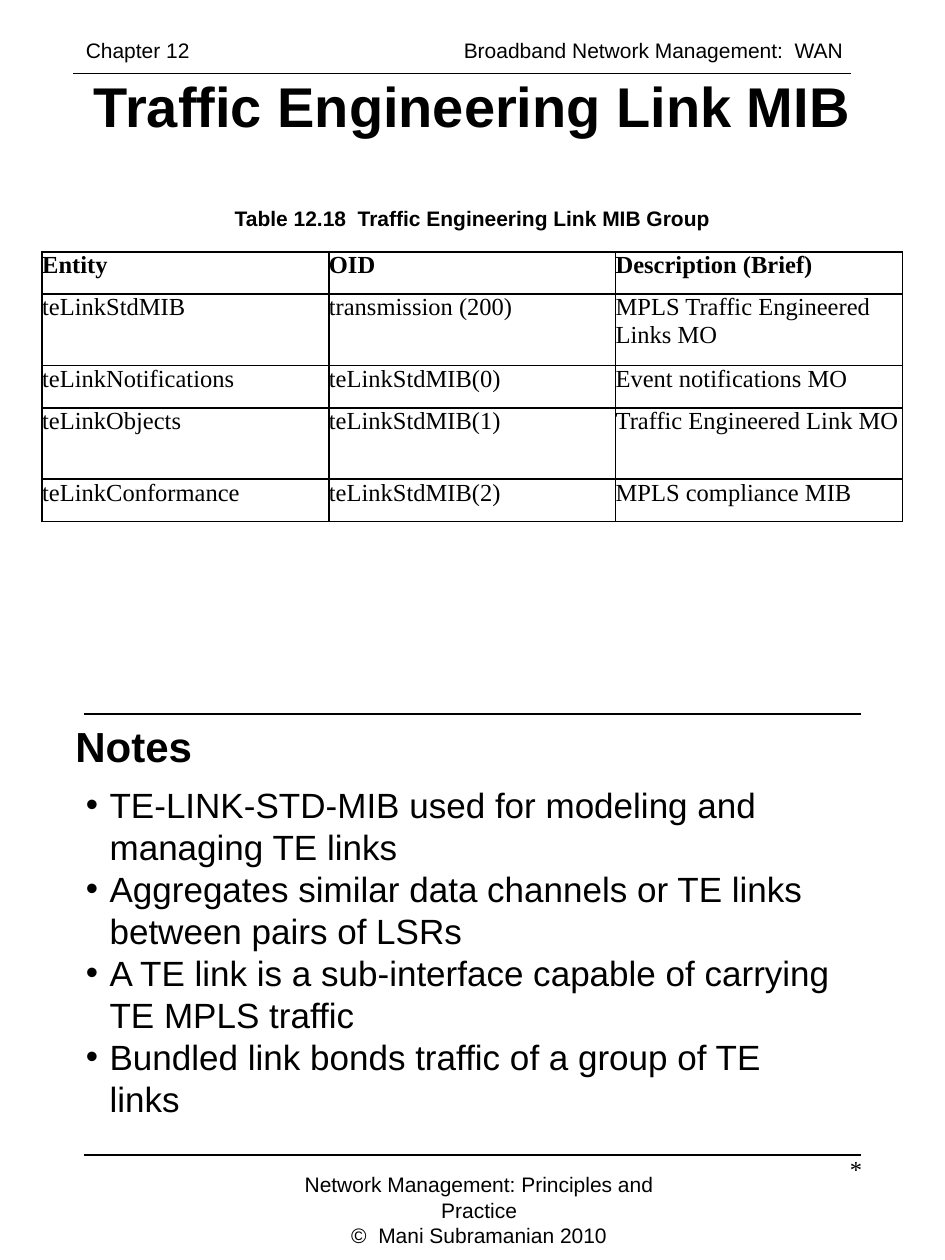
"""Build the Traffic Engineering Link MIB page with its table and notes."""
from dataclasses import dataclass

from lxml.etree import SubElement
from pptx import Presentation
from pptx.dml.color import RGBColor
from pptx.enum.shapes import MSO_CONNECTOR
from pptx.enum.text import MSO_ANCHOR, MSO_AUTO_SIZE, PP_ALIGN as Align
from pptx.oxml.ns import qn
from pptx.util import Cm, Pt

TITLE = "Traffic Engineering Link MIB"
HEADER = "Chapter 12\tBroadband Network Management:  WAN"
CAPTION = "Table 12.18  Traffic Engineering Link MIB Group"
ENTITIES = [
    ("Entity", "OID", "Description (Brief)"),
    ("teLinkStdMIB", "transmission (200)", "MPLS Traffic Engineered Links MO"),
    ("teLinkNotifications", "teLinkStdMIB(0)", "Event notifications MO"),
    ("teLinkObjects", "teLinkStdMIB(1)", "Traffic Engineered Link MO"),
    ("teLinkConformance", "teLinkStdMIB(2)", "MPLS compliance MIB"),
]
NOTES = [
    "TE-LINK-STD-MIB used for modeling and managing TE links",
    "Aggregates similar data channels or TE links between pairs of LSRs",
    "A TE link is a sub-interface capable of carrying TE MPLS traffic",
    "Bundled link bonds traffic of a group of TE links",
]
FOOTER = "Network Management: Principles and Practice\n©  Mani Subramanian 2010"
PAGE_MARK = "*"
RULES = [(1.48, 1.48, 17.15), (1.7, 14.4, 17.35), (1.7, 23.28, 17.35)]
ROW_HEIGHTS = [0.85, 1.44, 0.85, 1.44, 0.85]
COLUMN_WIDTH = 5.78


@dataclass(frozen=True)
class Theme:
    """Colours, fonts and type sizes of the page."""
    ink: RGBColor = RGBColor(0, 0, 0)
    sans: str = "Arial"
    serif: str = "Times New Roman"
    title: int = 32
    heading: int = 24
    notes: int = 20
    table: int = 14
    small: int = 12
    rule: int = 1


THEME = Theme()


def style(frame, size, font=THEME.sans, bold=False, align=Align.LEFT):
    """Format every paragraph and run of a text frame."""
    for paragraph in frame.paragraphs:
        paragraph.alignment = align
        for run in paragraph.runs:
            run.font.size = Pt(size)
            run.font.name = font
            run.font.bold = bold
            run.font.color.rgb = THEME.ink


def add_text(slide, box, text, size, **look):
    """Add a wrapping text box and return its frame."""
    frame = slide.shapes.add_textbox(*map(Cm, box)).text_frame
    frame.word_wrap = True
    frame.text = text
    style(frame, size, **look)
    return frame


def add_rule(slide, left, top, right):
    """Draw a horizontal rule."""
    rule = slide.shapes.add_connector(
        MSO_CONNECTOR.STRAIGHT, Cm(left), Cm(top), Cm(right), Cm(top))
    rule.line.color.rgb = THEME.ink
    rule.line.width = Pt(THEME.rule)
    SubElement(rule._element.spPr, qn("a:effectLst"))


def set_indent(paragraph, left, first=0):
    """Set the left margin and first-line indent of a paragraph."""
    properties = paragraph._p.get_or_add_pPr()
    properties.set("marL", str(Cm(left)))
    properties.set("indent", str(Cm(first)))
    return properties


def add_bullet(paragraph, hang):
    """Give a paragraph a hanging bullet."""
    properties = set_indent(paragraph, hang, -hang)
    SubElement(properties, qn("a:buFont"), typeface=THEME.sans)
    SubElement(properties, qn("a:buChar"), char="•")


def add_tab(paragraph, position):
    """Give a paragraph one left tab stop."""
    stops = SubElement(paragraph._p.get_or_add_pPr(), qn("a:tabLst"))
    SubElement(stops, qn("a:tab"), pos=str(Cm(position)), algn="l")


def add_borders(cell):
    """Outline all four sides of a table cell."""
    properties = cell._tc.get_or_add_tcPr()
    for side in ("lnL", "lnR", "lnT", "lnB"):
        line = SubElement(properties, qn(f"a:{side}"), w=str(Pt(THEME.rule)))
        fill = SubElement(line, qn("a:solidFill"))
        SubElement(fill, qn("a:srgbClr"), val=str(THEME.ink))


def add_entity_table(slide, left, top):
    """Add the table of MIB entities."""
    columns = len(ENTITIES[0])
    table = slide.shapes.add_table(
        len(ENTITIES), columns, Cm(left), Cm(top),
        Cm(columns * COLUMN_WIDTH), Cm(sum(ROW_HEIGHTS))).table
    table.first_row = table.horz_banding = False
    for column in table.columns:
        column.width = Cm(COLUMN_WIDTH)
    for index, (row, height) in enumerate(zip(table.rows, ROW_HEIGHTS)):
        row.height = Cm(height)
        for cell, entry in zip(row.cells, ENTITIES[index]):
            cell.text = entry
            cell.margin_left = cell.margin_right = 0
            cell.margin_top = cell.margin_bottom = 0
            style(cell.text_frame, THEME.table, THEME.serif, bold=index == 0)
            add_borders(cell)
            cell.fill.background()


def main():
    """Lay out the page and save it."""
    deck = Presentation()
    deck.slide_width, deck.slide_height = Cm(19.05), Cm(25.4)
    slide = deck.slides.add_slide(deck.slide_layouts.get_by_name("Title Only"))

    title = slide.shapes.title
    title.left, title.top, title.width, title.height = map(
        Cm, (0, 1.48, 19.05, 1.27))
    title.text_frame.text = TITLE
    title.text_frame.auto_size = MSO_AUTO_SIZE.NONE
    title.text_frame.vertical_anchor = MSO_ANCHOR.MIDDLE
    style(title.text_frame, THEME.title, bold=True, align=Align.CENTER)

    for rule in RULES:
        add_rule(slide, *rule)

    header = add_text(slide, (1.48, 0.64, 15.92, 0.76), HEADER, THEME.small)
    add_tab(header.paragraphs[0], 7.62)
    add_text(slide, (0.85, 4.02, 17.35, 0.76), CAPTION, THEME.small,
             bold=True, align=Align.CENTER)
    add_entity_table(slide, 0.85, 5.08)

    heading = add_text(slide, (0, 14.4, 4.24, 1.27), "Notes", THEME.heading,
                       bold=True)
    set_indent(heading.paragraphs[0], 1.27)
    notes = add_text(slide, (1.48, 15.66, 15.66, 6.25), "\n".join(NOTES),
                     THEME.notes)
    for paragraph in notes.paragraphs:
        add_bullet(paragraph, 0.48)

    add_text(slide, (5.11, 23.5, 9.1, 1.27), FOOTER, THEME.small,
             align=Align.CENTER)
    add_text(slide, (13.67, 23.14, 3.96, 1.7), PAGE_MARK, THEME.table,
             font=THEME.serif, align=Align.RIGHT)
    deck.save("out.pptx")


if __name__ == "__main__":
    main()
